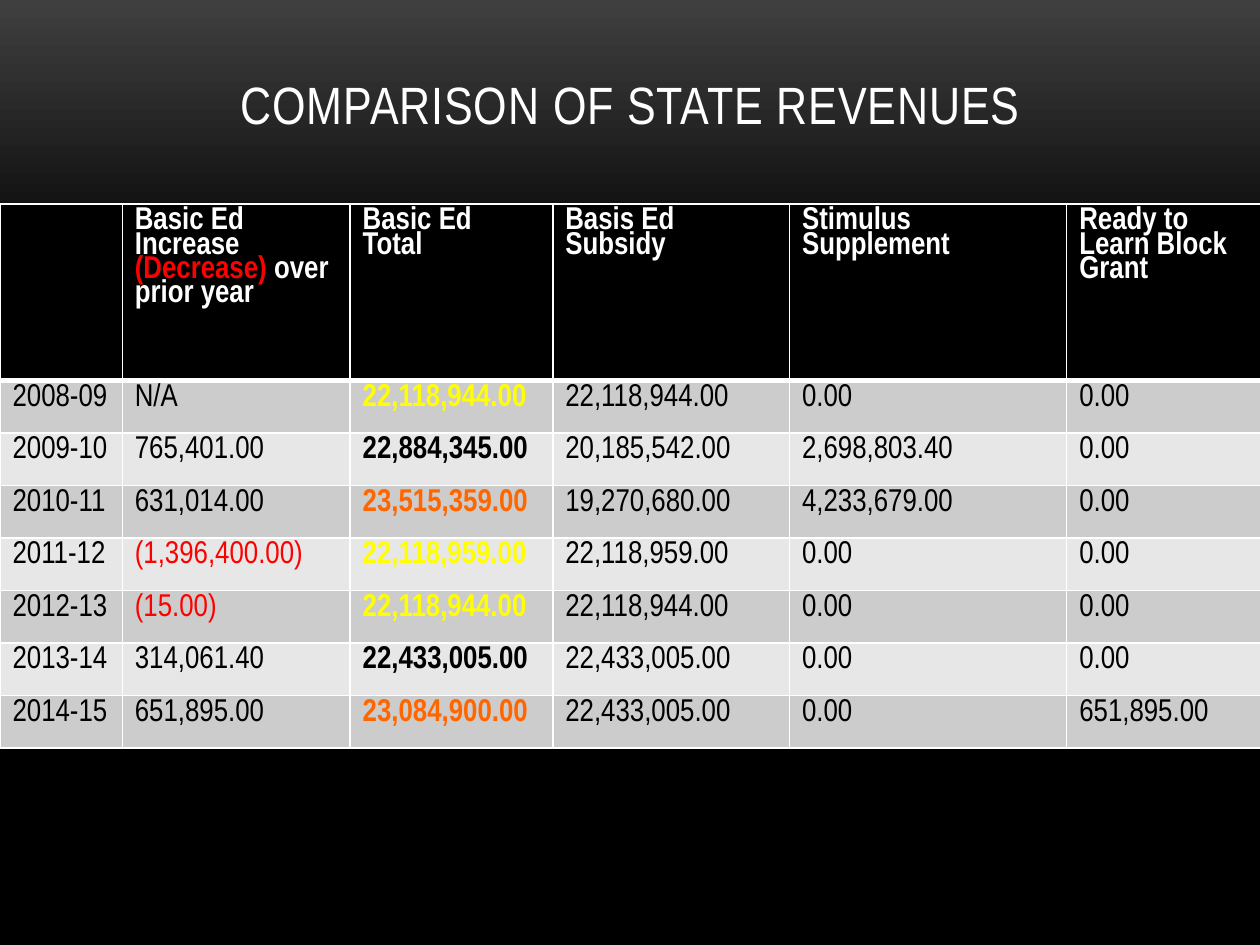
from typing import NamedTuple

import pptx
import pptx.dml.color
import pptx.enum.text
import pptx.oxml
import pptx.oxml.ns
import pptx.util

PX = 914400 / 240
FONT = "Arial Narrow"
HEX = {"white": "FFFFFF", "black": "000000", "top": "3F3F3F", "red": "FF0000",
       "yellow": "FFFF00", "orange": "FF6600", "odd": "CCCCCC", "even": "E7E7E7"}
COLS = [233, 434, 386, 451, 528, 372]
HEAD_H, ROW_H = 336, 100
TOTAL = 2


class Run(NamedTuple):
    text: str
    hue: str = "white"
    bold: bool = True


class Year(NamedTuple):
    cells: list[str]
    hue: str


HEADS = [
    [],
    [Run("Basic Ed Increase "), Run("(Decrease) ", "red"), Run("over prior year")],
    [Run("Basic Ed \vTotal")],
    [Run("Basis Ed Subsidy")],
    [Run("Stimulus Supplement")],
    [Run("Ready to Learn Block Grant")],
]
YEARS = [
    Year(["2008-09", "N/A", "22,118,944.00", "22,118,944.00", "0.00", "0.00"], "yellow"),
    Year(["2009-10", "765,401.00", "22,884,345.00", "20,185,542.00", "2,698,803.40", "0.00"], "black"),
    Year(["2010-11", "631,014.00", "23,515,359.00", "19,270,680.00", "4,233,679.00", "0.00"], "orange"),
    Year(["2011-12", "(1,396,400.00)", "22,118,959.00", "22,118,959.00", "0.00", "0.00"], "yellow"),
    Year(["2012-13", "(15.00)", "22,118,944.00", "22,118,944.00", "0.00", "0.00"], "yellow"),
    Year(["2013-14", "314,061.40", "22,433,005.00", "22,433,005.00", "0.00", "0.00"], "black"),
    Year(["2014-15", "651,895.00", "23,084,900.00", "22,433,005.00", "0.00", "651,895.00"], "orange"),
]


def px(n: int) -> int:
    return round(n * PX)


def rgb(hue: str) -> pptx.dml.color.RGBColor:
    return pptx.dml.color.RGBColor.from_string(HEX[hue])


def style(font, size: int, hue: str, bold: bool) -> None:
    for key, val in {"name": FONT, "size": pptx.util.Pt(size), "bold": bold}.items():
        setattr(font, key, val)
    font.color.rgb = rgb(hue)


def edge(cell, top: int, base: int) -> None:
    """Draw white borders; top and base are widths in points."""
    props = cell._tc.get_or_add_tcPr()
    for side, width in {"L": 1, "R": 1, "T": top, "B": base}.items():
        props.append(pptx.oxml.parse_xml(
            f'<a:ln{side} {pptx.oxml.ns.nsdecls("a")} w="{pptx.util.Pt(width)}">'
            f'<a:solidFill><a:srgbClr val="{HEX["white"]}"/></a:solidFill></a:ln{side}>'))


def put(cell, runs: list[Run], fill: str, top: int = 1, base: int = 1) -> None:
    edge(cell, top, base)
    cell.fill.solid()
    cell.fill.fore_color.rgb = rgb(fill)
    para = cell.text_frame.paragraphs[0]
    para.line_spacing = 0.82
    for item in runs:
        for n, part in enumerate(item.text.split("\v")):
            if n:
                para.add_line_break()
            run = para.add_run()
            run.text = part
            style(run.font, 18, item.hue, item.bold)


def body(year: Year, col: int) -> Run:
    text = year.cells[col]
    if col == TOTAL:
        return Run(text, year.hue)
    return Run(text, "red" if text.startswith("(") else "black", False)


def paint(slide) -> None:
    """Fade the background from grey to black, top down."""
    fill = slide.background.fill
    fill.gradient()
    fill.gradient_angle = 270
    for stop, (pos, hue) in zip(fill.gradient_stops, [(0, "top"), (0.31, "black")]):
        stop.position = pos
        stop.color.rgb = rgb(hue)


def head(slide) -> None:
    title = slide.shapes.title
    for key, val in {"left": 161, "top": -34, "width": 2081, "height": 300}.items():
        setattr(title, key, px(val))
    frame = title.text_frame
    frame.text = "COMPARISON OF STATE REVENUES"
    for key, val in {"auto_size": pptx.enum.text.MSO_AUTO_SIZE.NONE,
                     "vertical_anchor": pptx.enum.text.MSO_ANCHOR.BOTTOM,
                     "word_wrap": True, "margin_bottom": px(8)}.items():
        setattr(frame, key, val)
    para = frame.paragraphs[0]
    para.alignment = pptx.enum.text.PP_ALIGN.CENTER
    font = para.runs[0].font
    style(font, 30, "white", False)
    font._element.set("spc", "50")


def grid(slide) -> None:
    high = HEAD_H + ROW_H * len(YEARS)
    table = slide.shapes.add_table(len(YEARS) + 1, len(COLS), 0, px(389),
                                   px(sum(COLS)), px(high)).table
    for n, row in enumerate(table.rows):
        row.height = px(ROW_H if n else HEAD_H)
    for col, wide in enumerate(COLS):
        table.columns[col].width = px(wide)
        put(table.cell(0, col), HEADS[col], "black", base=3)
        for n, year in enumerate(YEARS, 1):
            put(table.cell(n, col), [body(year, col)], "odd" if n % 2 else "even",
                top=3 if n == 1 else 1)


def main() -> None:
    deck = pptx.Presentation()
    deck.slide_width, deck.slide_height = px(2400), px(1800)
    slide = deck.slides.add_slide(deck.slide_layouts[5])
    paint(slide)
    head(slide)
    grid(slide)
    deck.save("out.pptx")


if __name__ == "__main__":
    main()
